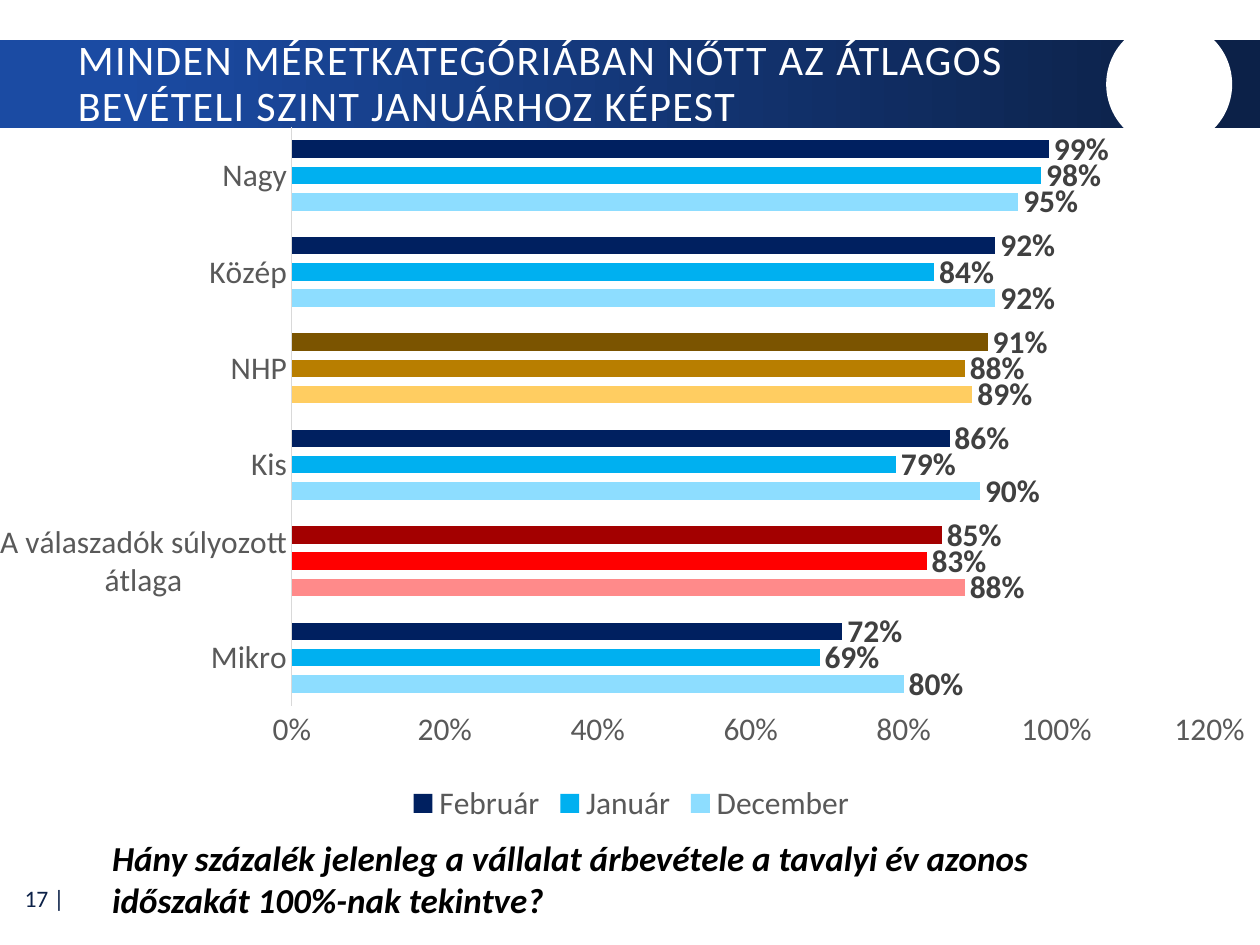
from dataclasses import dataclass, field
from typing import Optional

from lxml.etree import SubElement
from pptx import Presentation
from pptx.chart.data import CategoryChartData
from pptx.dml.color import RGBColor
from pptx.enum.chart import XL_CHART_TYPE, XL_LABEL_POSITION, XL_LEGEND_POSITION, XL_TICK_MARK
from pptx.enum.shapes import MSO_SHAPE
from pptx.enum.text import MSO_ANCHOR, PP_ALIGN
from pptx.oxml import parse_xml
from pptx.oxml.ns import nsdecls, qn
from pptx.util import Cm, Pt

FONT = "Calibri"
CATEGORIES = ["Mikro", "A válaszadók súlyozott átlaga", "Kis", "NHP", "Közép", "Nagy"]
AVERAGE, PROGRAMME = 1, 3


@dataclass
class Frame:
    left: float
    top: float
    width: float
    height: float

    def lengths(self) -> list:
        return [Cm(value) for value in (self.left, self.top, self.width, self.height)]


@dataclass
class Label:
    text: str
    frame: Frame
    size: float
    color: str
    bold: bool = False
    italic: bool = False
    align: PP_ALIGN = PP_ALIGN.LEFT
    anchor: MSO_ANCHOR = MSO_ANCHOR.TOP
    line_spacing: Optional[float] = None
    letter_spacing: Optional[float] = None


@dataclass
class Month:
    name: str
    values: list
    color: str
    highlights: dict = field(default_factory=dict)


LABELS = [
    Label("17 |", Frame(0.03, 17.63, 1.52, 0.94), 13.5, "0C2148",
          align=PP_ALIGN.RIGHT, anchor=MSO_ANCHOR.MIDDLE),
    Label("MINDEN MÉRETKATEGÓRIÁBAN NŐTT AZ ÁTLAGOS BEVÉTELI SZINT JANUÁRHOZ KÉPEST",
          Frame(1.32, 0.86, 21.13, 1.7), 24, "FFFFFF",
          anchor=MSO_ANCHOR.MIDDLE, line_spacing=0.9, letter_spacing=0.8),
    Label("Hány százalék jelenleg a vállalat árbevétele a tavalyi év azonos "
          "időszakát 100%-nak tekintve?",
          Frame(2.01, 16.74, 20.47, 1.96), 20, "000000", bold=True, italic=True),
]

MONTHS = [
    Month("December", [0.8, 0.88, 0.9, 0.89, 0.92, 0.95], "8DDDFF",
          {AVERAGE: "FF8A8A", PROGRAMME: "FFCD61"}),
    Month("Január", [0.69, 0.83, 0.79, 0.88, 0.84, 0.98], "00B0F0",
          {AVERAGE: "FF0000", PROGRAMME: "B87E00"}),
    Month("Február", [0.72, 0.85, 0.86, 0.91, 0.92, 0.99], "002060",
          {AVERAGE: "A30000", PROGRAMME: "7B5400"}),
]


def paint(color_format, color: str) -> None:
    color_format.rgb = RGBColor.from_string(color)


def fill_solid(fill, color: str) -> None:
    fill.solid()
    paint(fill.fore_color, color)


def style_font(font, size: float, color: str, bold: bool = False, italic: bool = False) -> None:
    font.name = FONT
    font.size = Pt(size)
    font.bold = bold
    font.italic = italic
    paint(font.color, color)


def add_plain_shape(page, kind: MSO_SHAPE, frame: Frame):
    shape = page.shapes.add_shape(kind, *frame.lengths())
    shape.shadow.inherit = False
    shape.line.fill.background()
    return shape


def add_banner(page) -> None:
    banner = add_plain_shape(page, MSO_SHAPE.RECTANGLE, Frame(0, 0.81, 25.4, 1.78))
    banner.fill.gradient()
    banner.fill.gradient_angle = 0
    for stop, position, color in zip(banner.fill.gradient_stops, (0.09, 0.95), ("1B4BA3", "0C2148")):
        stop.position = position
        paint(stop.color, color)
    circle = add_plain_shape(page, MSO_SHAPE.OVAL, Frame(22.3, 0.43, 2.54, 2.54))
    fill_solid(circle.fill, "FFFFFF")


def add_label(page, label: Label) -> None:
    box = page.shapes.add_textbox(*label.frame.lengths())
    box.text_frame.word_wrap = True
    box.text_frame.vertical_anchor = label.anchor
    para = box.text_frame.paragraphs[0]
    para.alignment = label.align
    para.line_spacing = label.line_spacing
    span = para.add_run()
    span.text = label.text
    style_font(para.font, label.size, label.color, label.bold, label.italic)
    if label.letter_spacing:
        span.font._element.set("spc", str(round(label.letter_spacing * 100)))


def set_plot_area(chart, left: float, top: float, width: float, height: float) -> None:
    plot_area = chart._chartSpace.chart.plotArea
    for old_layout in plot_area.findall(qn("c:layout")):
        plot_area.remove(old_layout)
    layout = parse_xml(f"<c:layout {nsdecls('c')}><c:manualLayout/></c:layout>")
    settings = {"layoutTarget": "inner", "xMode": "edge", "yMode": "edge",
                "x": left, "y": top, "w": width, "h": height}
    for name, value in settings.items():
        SubElement(layout[0], qn(f"c:{name}")).set("val", str(value))
    plot_area.insert(0, layout)


def style_axis(axis) -> None:
    axis.has_major_gridlines = False
    axis.major_tick_mark = XL_TICK_MARK.NONE
    axis.minor_tick_mark = XL_TICK_MARK.NONE
    style_font(axis.tick_labels.font, 18, "595959")


def style_series(series, month: Month) -> None:
    series.invert_if_negative = False
    fill_solid(series.format.fill, month.color)
    for index, color in month.highlights.items():
        fill_solid(series.points[index].format.fill, color)
    labels = series.data_labels
    labels.show_value = True
    labels.number_format = "0%"
    labels.number_format_is_linked = False
    labels.position = XL_LABEL_POSITION.OUTSIDE_END
    style_font(labels.font, 18, "404040", bold=True)


def add_revenue_chart(page, frame: Frame) -> None:
    data = CategoryChartData(number_format="0%")
    data.categories = CATEGORIES
    for month in MONTHS:
        data.add_series(month.name, month.values)
    chart = page.shapes.add_chart(XL_CHART_TYPE.BAR_CLUSTERED, *frame.lengths(), data).chart
    chart.has_title = False
    style_font(chart.font, 18, "000000")
    set_plot_area(chart, 0.23, 0.03, 0.73, 0.8)

    plot = chart.plots[0]
    plot.vary_by_categories = False
    plot.gap_width = 150
    plot.overlap = -50
    for series, month in zip(plot.series, MONTHS):
        style_series(series, month)

    style_axis(chart.category_axis)
    paint(chart.category_axis.format.line.color, "D9D9D9")
    chart.category_axis.format.line.width = Pt(0.75)
    style_axis(chart.value_axis)
    chart.value_axis.format.line.fill.background()
    chart.value_axis.minimum_scale = 0
    chart.value_axis.maximum_scale = 1.2
    chart.value_axis.major_unit = 0.2
    chart.value_axis.tick_labels.number_format = "0%"
    chart.value_axis.tick_labels.number_format_is_linked = False

    chart.has_legend = True
    chart.legend.position = XL_LEGEND_POSITION.BOTTOM
    chart.legend.include_in_layout = False
    style_font(chart.legend.font, 18, "595959")


def main() -> None:
    deck = Presentation()
    deck.slide_width = Cm(25.4)
    deck.slide_height = Cm(19.05)
    page = deck.slides.add_slide(deck.slide_layouts[6])
    add_banner(page)
    for label in LABELS:
        add_label(page, label)
    add_revenue_chart(page, Frame(0, 2.13, 25.4, 14.58))
    deck.save("out.pptx")


if __name__ == "__main__":
    main()
